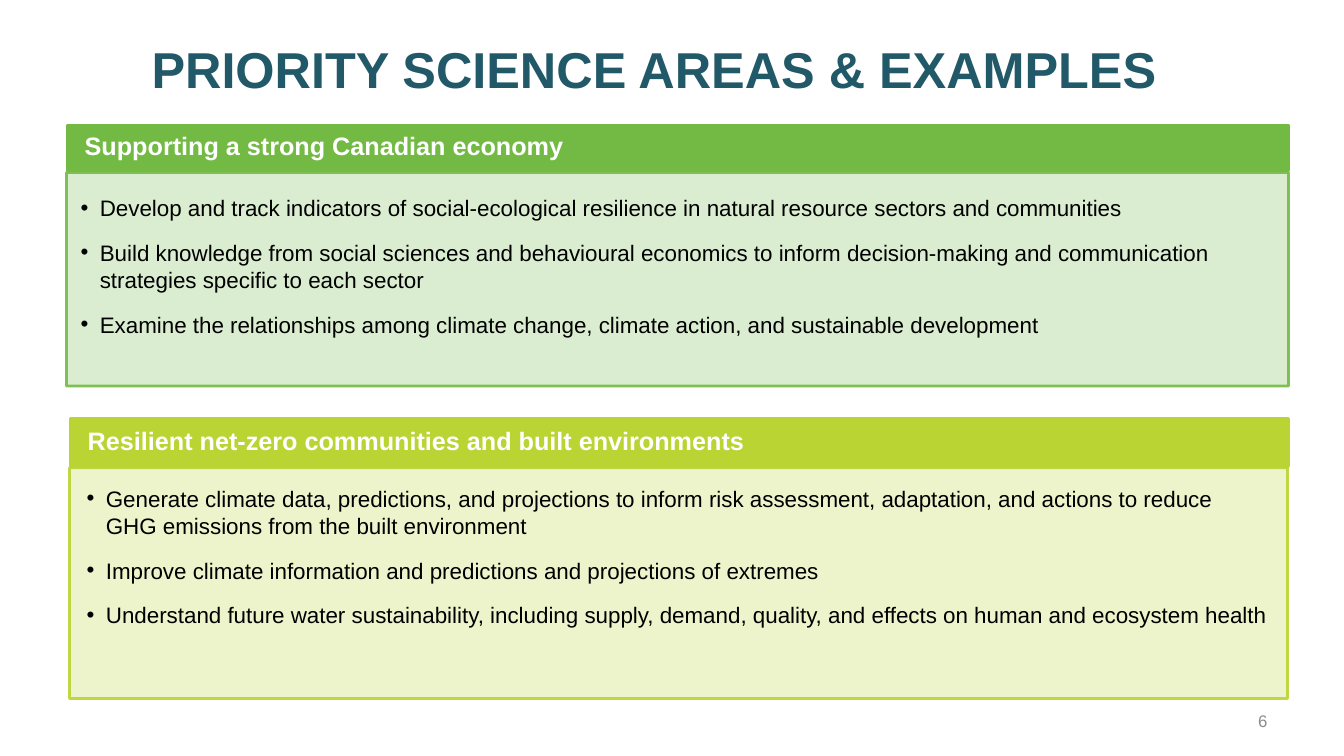
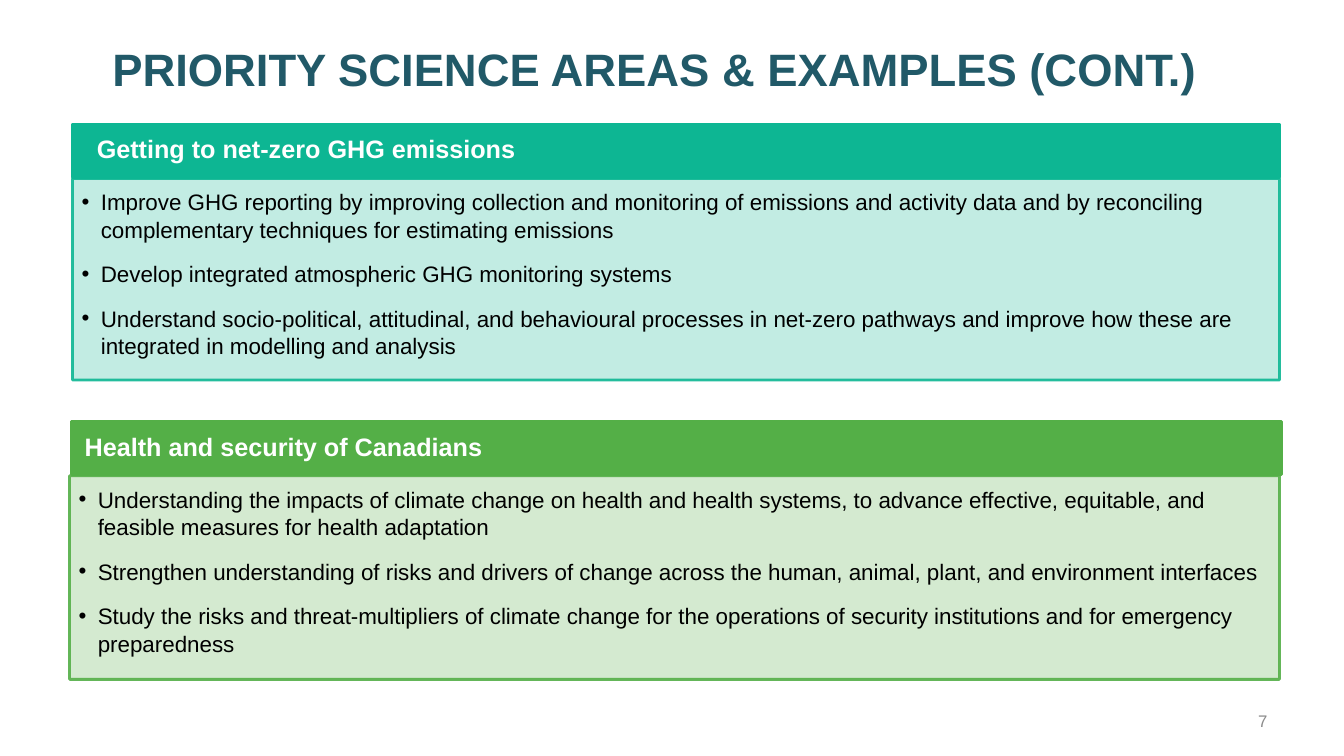
from lxml import etree
from pptx import Presentation
from pptx import util as u
from pptx.dml.color import RGBColor
from pptx.enum import shapes, text
from pptx.oxml import ns

FONT = "Arial"
WHITE = RGBColor(0xFF, 0xFF, 0xFF)
BLACK = RGBColor(0x00, 0x00, 0x00)
GREY = RGBColor(0x8C, 0x8C, 0x8C)
NAVY = RGBColor(0x21, 0x59, 0x68)
GREEN = RGBColor(0x73, 0xBA, 0x44)
LIME = RGBColor(0xB9, 0xD4, 0x33)
TEAL = RGBColor(0x0D, 0xB6, 0x93)
LEAF = RGBColor(0x54, 0xAF, 0x47)


class Deck:
    styles = {
        "title": {"size": 36, "bold": True, "color": NAVY},
        "header": {"size": 18, "bold": True, "color": WHITE},
        "bullet": {"size": 16, "bold": False, "color": BLACK},
        "number": {"size": 12, "bold": False, "color": GREY},
    }

    def __init__(self):
        self.prs = Presentation()
        self.prs.slide_width = u.Inches(13.33)
        self.prs.slide_height = u.Inches(7.5)
        self.s = None

    def styled_run(self, p, words, style, **changes):
        r = p.add_run()
        r.text = words
        fmt = {**self.styles[style], **changes}
        r.font.color.rgb = fmt.pop("color")
        fmt["size"] = u.Pt(fmt["size"])
        for name, value in {"name": FONT, **fmt}.items():
            setattr(r.font, name, value)

    def frame(self, sp, anchor, insets=(0.1, 0.05, 0.1, 0.05)):
        tf = sp.text_frame
        tf.word_wrap = True
        tf.vertical_anchor = anchor
        for side, inset in zip(("left", "top", "right", "bottom"), insets):
            setattr(tf, f"margin_{side}", u.Inches(inset))
        return tf

    def slide(self, title, number, **changes):
        self.s = self.prs.slides.add_slide(self.prs.slide_layouts[5])
        sp = self.s.shapes.title
        place = {"left": 0.49, "top": 0.12, "width": 12, "height": 1.11}
        for name, value in place.items():
            setattr(sp, name, u.Inches(value))
        p = self.frame(sp, text.MSO_ANCHOR.MIDDLE).paragraphs[0]
        p.alignment = text.PP_ALIGN.CENTER
        self.styled_run(p, title, "title", **changes)

        sp = self.s.shapes.add_textbox(*map(u.Inches, (9.56, 6.95, 3.11, 0.4)))
        p = self.frame(sp, text.MSO_ANCHOR.MIDDLE).paragraphs[0]
        p.alignment = text.PP_ALIGN.RIGHT
        self.styled_run(p, str(number), "number")

    def box(self, at, color):
        sp = self.s.shapes.add_shape(shapes.MSO_SHAPE.RECTANGLE, *map(u.Inches, at))
        sp.shadow.inherit = False
        sp.fill.solid()
        sp.fill.fore_color.rgb = color
        sp.line.color.rgb = color
        sp.line.width = u.Pt(2)
        return sp

    def fade(self, fill, percent):
        color = fill._xPr.find(f".//{ns.qn('a:srgbClr')}")
        etree.SubElement(color, ns.qn("a:alpha"), val=str(percent * 1000))

    def header(self, at, color, words, indent):
        sp = self.box(at, color)
        tf = self.frame(sp, text.MSO_ANCHOR.MIDDLE, (indent, 0.09, 0.16, 0.09))
        p = tf.paragraphs[0]
        p.alignment = text.PP_ALIGN.LEFT
        p.line_spacing = 0.9
        self.styled_run(p, words, "header")

    def bullets(self, at, color, items, insets):
        sp = self.box(at, color)
        for fill, percent in ((sp.fill, 25), (sp.line.fill, 90)):
            self.fade(fill, percent)
        tf = self.frame(sp, text.MSO_ANCHOR.TOP, insets)
        for i, item in enumerate(items):
            p = tf.add_paragraph() if i else tf.paragraphs[0]
            pPr = p._p.get_or_add_pPr()
            hang = u.Inches(0.19)
            pPr.set("marL", str(int(hang)))
            pPr.set("indent", str(-int(hang)))
            etree.SubElement(pPr, ns.qn("a:buFont"), typeface=FONT)
            etree.SubElement(pPr, ns.qn("a:buChar"), char="•")
            p.alignment = text.PP_ALIGN.LEFT
            p.line_spacing = 1.03
            p.space_after = u.Pt(12)
            self.styled_run(p, item, "bullet")


def main():
    deck = Deck()
    plain = (0.09, 0.09, 0.12, 0.14)

    deck.slide("PRIORITY SCIENCE AREAS & EXAMPLES", 6)
    deck.header((0.67, 1.24, 12.11, 0.45), GREEN, "Supporting a strong Canadian economy", 0.17)
    deck.bullets((0.66, 1.71, 12.12, 2.12), GREEN, [
        "Develop and track indicators of social-ecological resilience in natural resource sectors and communities",
        "Build knowledge from social sciences and behavioural economics to inform decision-making and "
        "communication strategies specific to each sector",
        "Examine the relationships among climate change, climate action, and sustainable development",
    ], (0.14, 0.21, 0.07, 0.14))
    deck.header((0.7, 4.15, 12.08, 0.48), LIME, "Resilient net-zero communities and built environments", 0.17)
    deck.bullets((0.69, 4.64, 12.08, 2.29), LIME, [
        "Generate climate data, predictions, and projections to inform risk assessment, adaptation, and "
        "actions to reduce GHG emissions from the built environment",
        "Improve climate information and predictions and projections of extremes",
        "Understand future water sustainability, including supply, demand, quality, and effects on human "
        "and ecosystem health",
    ], (0.17, 0.16, 0.2, 0.14))

    deck.slide("PRIORITY SCIENCE AREAS & EXAMPLES (CONT.)", 7, size=32.4)
    deck.header((0.72, 1.23, 11.97, 0.53), TEAL, "Getting to net-zero GHG emissions", 0.24)
    deck.bullets((0.72, 1.77, 11.97, 2), TEAL, [
        "Improve GHG reporting by improving collection and monitoring of emissions and activity data and "
        "by reconciling complementary techniques for estimating emissions",
        "Develop integrated atmospheric GHG monitoring systems",
        "Understand socio-political, attitudinal, and behavioural processes in net-zero pathways and "
        "improve how these are integrated in modelling and analysis",
    ], plain)
    deck.header((0.71, 4.18, 12, 0.53), LEAF, "Health and security of Canadians", 0.13)
    deck.bullets((0.69, 4.72, 12, 2.02), LEAF, [
        "Understanding the impacts of climate change on health and health systems, to advance effective, "
        "equitable, and feasible measures for health adaptation",
        "Strengthen understanding of risks and drivers of change across the human, animal, plant, and "
        "environment interfaces",
        "Study the risks and threat-multipliers of climate change for the operations of security "
        "institutions and for emergency preparedness",
    ], plain)

    deck.prs.save("out.pptx")


if __name__ == "__main__":
    main()
